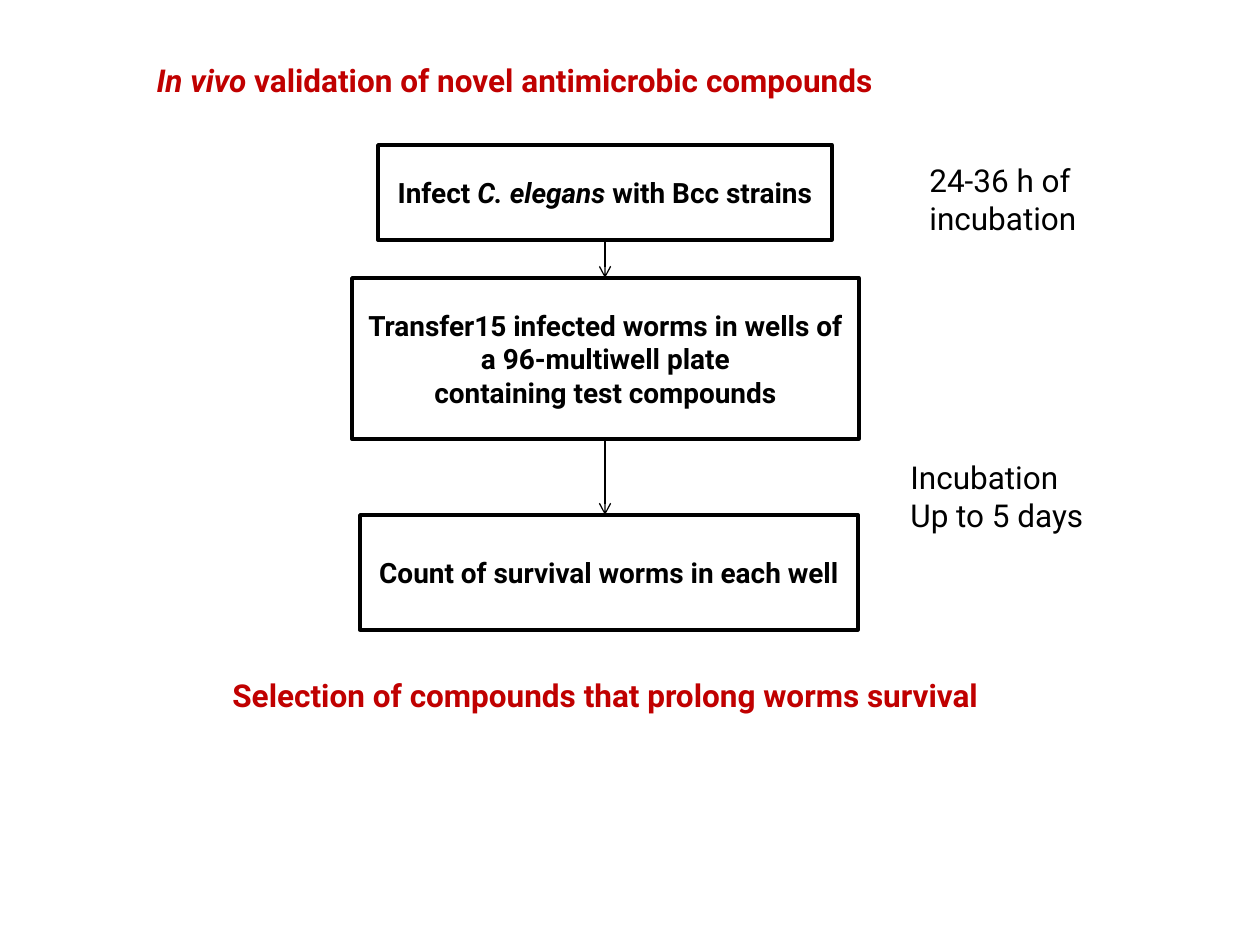
"""Builds a flow chart slide on in vivo validation of antimicrobic compounds."""
import pptx
import pptx.dml.color
import pptx.enum.shapes
import pptx.enum.text
import pptx.oxml.ns
import pptx.util
from lxml import etree

BLACK = pptx.dml.color.RGBColor(0x00, 0x00, 0x00)
RED = pptx.dml.color.RGBColor(0xC0, 0x00, 0x00)
LEFT = pptx.enum.text.PP_ALIGN.LEFT
CENTER = pptx.enum.text.PP_ALIGN.CENTER
TOP = pptx.enum.text.MSO_ANCHOR.TOP
MIDDLE = pptx.enum.text.MSO_ANCHOR.MIDDLE


def px(length):
    return round(length * pptx.util.Inches(1) / 126)


class FlowSlide:
    font = "Roboto"
    heading_size = 18
    step_size = 16

    def __init__(self, deck):
        self.slide = deck.slides.add_slide(deck.slide_layouts[5])

    def set_text(self, shape, paragraphs, size, color, bold, align, anchor):
        frame = shape.text_frame
        frame.word_wrap = True
        frame.auto_size = pptx.enum.text.MSO_AUTO_SIZE.NONE
        frame.vertical_anchor = anchor
        for index, runs in enumerate(paragraphs):
            paragraph = frame.add_paragraph() if index else frame.paragraphs[0]
            paragraph.alignment = align
            paragraph.font.name = self.font
            paragraph.font.size = pptx.util.Pt(size)
            paragraph.font.bold = bold
            paragraph.font.color.rgb = color
            for words, italic in runs:
                run = paragraph.add_run()
                run.text = words
                if italic:
                    run.font.italic = True

    def title(self, box, runs):
        heading = self.slide.shapes.title
        heading.left, heading.top, heading.width, heading.height = map(px, box)
        self.set_text(heading, [runs], self.heading_size, RED, True, LEFT, TOP)

    def label(self, box, lines, color=BLACK, bold=False, align=LEFT):
        label = self.slide.shapes.add_textbox(*map(px, box))
        paragraphs = [[(line, False)] for line in lines]
        self.set_text(label, paragraphs, self.heading_size, color, bold, align, TOP)

    def step(self, box, paragraphs):
        rectangle = pptx.enum.shapes.MSO_SHAPE.RECTANGLE
        step = self.slide.shapes.add_shape(rectangle, *map(px, box))
        step.shadow.inherit = False
        step.fill.background()
        step.line.color.rgb = BLACK
        step.line.width = pptx.util.Pt(2)
        self.set_text(step, paragraphs, self.step_size, BLACK, True, CENTER, MIDDLE)

    def arrow(self, x, top, bottom):
        straight = pptx.enum.shapes.MSO_CONNECTOR.STRAIGHT
        arrow = self.slide.shapes.add_connector(
            straight, px(x), px(top), px(x), px(bottom))
        arrow.line.color.rgb = BLACK
        arrow.line.width = pptx.util.Pt(0.75)
        qn = pptx.oxml.ns.qn
        properties = arrow.element.spPr
        etree.SubElement(properties.find(qn("a:ln")), qn("a:tailEnd"), type="arrow")
        etree.SubElement(properties, qn("a:effectLst"))


def main():
    deck = pptx.Presentation()
    deck.slide_width, deck.slide_height = px(1260), px(945)
    flow = FlowSlide(deck)

    flow.title((144, 55, 893, 50), [
        ("In vivo ", True), ("validation of novel antimicrobic compounds", False)])

    steps = [
        ((378, 145, 454, 95), [
            [("Infect ", False), ("C. elegans ", True), ("with Bcc strains", False)]]),
        ((352, 278, 507, 161), [
            [("Transfer15 infected worms in wells of a 96-multiwell plate", False)],
            [("containing test compounds", False)]]),
        ((360, 515, 498, 115), [
            [("Count of survival worms in each well", False)]]),
    ]
    for box, paragraphs in steps:
        flow.step(box, paragraphs)
    for (upper, _), (lower, _) in zip(steps, steps[1:]):
        flow.arrow(605, upper[1] + upper[3], lower[1])

    flow.label((184, 670, 843, 50), ["Selection of compounds that prolong worms survival"],
               RED, True, CENTER)
    flow.label((917, 155, 277, 89), ["24-36 h of incubation"])
    flow.label((898, 452, 277, 89), ["Incubation", "Up to 5 days"])

    deck.save("out.pptx")


if __name__ == "__main__":
    main()
